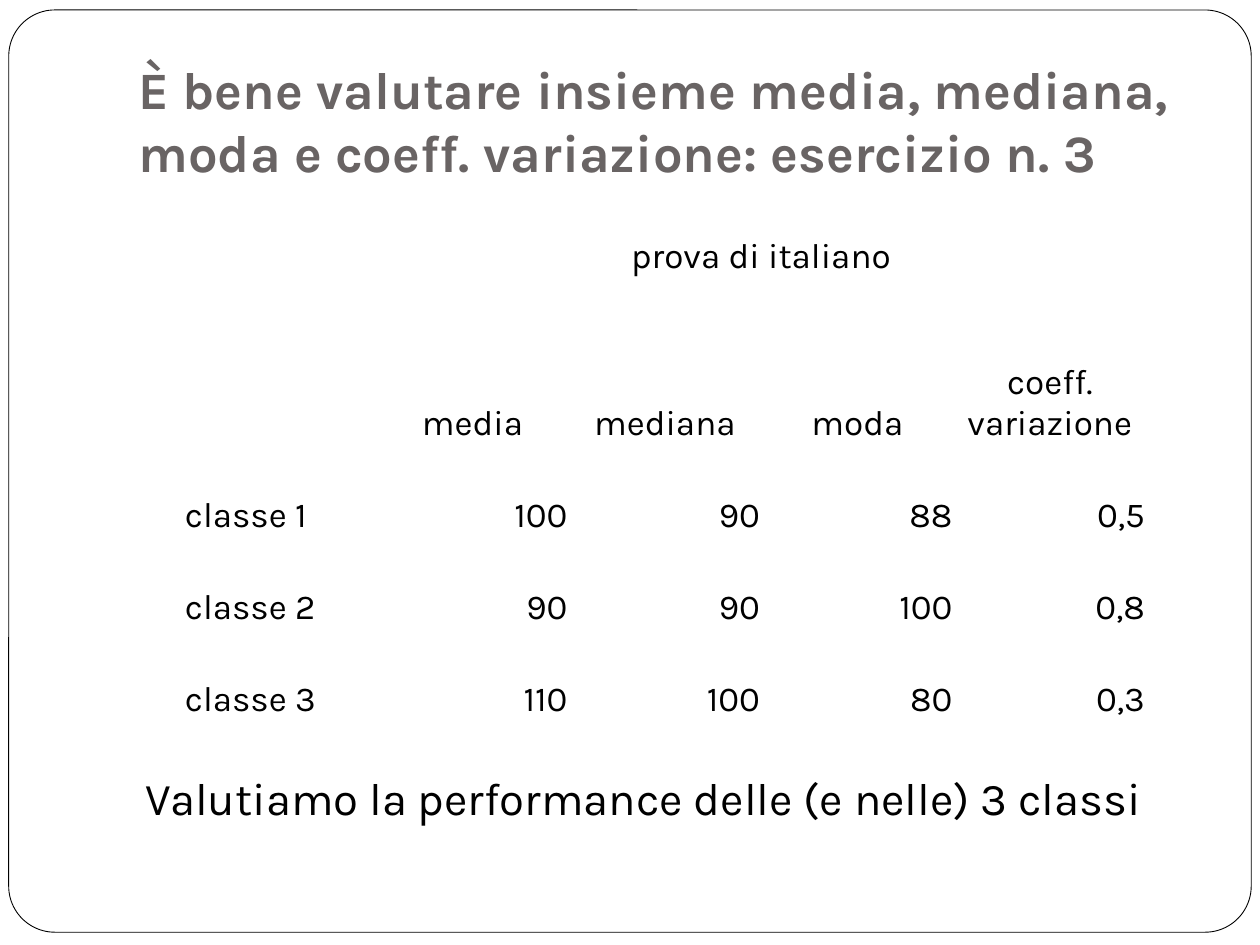
from pptx import Presentation
from pptx.dml.color import RGBColor
from pptx.enum.shapes import MSO_SHAPE
from pptx.enum.text import MSO_ANCHOR, PP_ALIGN
from pptx.util import Pt

TITLE = "È bene valutare insieme media, mediana, moda e coeff. variazione: esercizio n. 3"
CLOSING = "Valutiamo la performance delle (e nelle) 3 classi"
TABLE_ROWS = [
    ["", "prova di italiano", "", "", ""],
    ["", "media", "mediana", "moda", "coeff. variazione"],
    ["classe 1", "100", "90", "88", "0,5"],
    ["classe 2", "90", "90", "100", "0,8"],
    ["classe 3", "110", "100", "80", "0,3"],
]
HEADER_ROWS = 2
ROW_HEIGHTS = [52.6, 95.2, 52.6, 52.6, 52.6]
COLUMN_WIDTH = 110

COLORS = {"paper": "FFFFFF", "frame": "000000", "title": "696464", "text": "000000"}
TITLE_FONT = {"name": "Karla", "size": Pt(30), "bold": True}
CLOSING_FONT = {"name": "Karla", "size": Pt(26)}
TABLE_FONT = {"name": "Karla", "size": Pt(20), "bold": False}
TITLE_FRAME = {"word_wrap": True, "vertical_anchor": MSO_ANCHOR.BOTTOM,
               "margin_bottom": Pt(7.2)}
CLOSING_FRAME = {"word_wrap": True, "vertical_anchor": MSO_ANCHOR.TOP}
CELL_FORMAT = {"vertical_anchor": MSO_ANCHOR.BOTTOM, "margin_left": Pt(0.7),
               "margin_right": Pt(0.7), "margin_top": Pt(0.7), "margin_bottom": Pt(0)}


def apply_format(target, values):
    for name, value in values.items():
        setattr(target, name, value)


def write_text(para, text, font, color):
    span = para.add_run()
    span.text = text
    apply_format(span.font, font)
    span.font.color.rgb = RGBColor.from_string(COLORS[color])


def add_text(page, place, text, frame_format, font, color):
    box = page.shapes.add_textbox(*map(Pt, place))
    apply_format(box.text_frame, frame_format)
    para = box.text_frame.paragraphs[0]
    write_text(para, text, font, color)
    return para


def add_frame(page):
    frame = page.shapes.add_shape(MSO_SHAPE.ROUNDED_RECTANGLE,
                                  Pt(5), Pt(5.7), Pt(710), Pt(527))
    frame.adjustments[0] = 0.05
    frame.shadow.inherit = False
    frame.fill.solid()
    frame.fill.fore_color.rgb = RGBColor.from_string(COLORS["paper"])
    frame.line.color.rgb = RGBColor.from_string(COLORS["frame"])
    frame.line.width = Pt(0.5)


def alignment_for(row, column):
    if row < HEADER_ROWS:
        return PP_ALIGN.CENTER
    return PP_ALIGN.RIGHT if column else PP_ALIGN.LEFT


def add_scores(page):
    columns = len(TABLE_ROWS[0])
    holder = page.shapes.add_table(len(TABLE_ROWS), columns, Pt(105), Pt(106),
                                   Pt(COLUMN_WIDTH * columns), Pt(sum(ROW_HEIGHTS)))
    table = holder.table
    apply_format(table, {"first_row": False, "horz_banding": False})
    for column in table.columns:
        column.width = Pt(COLUMN_WIDTH)
    for row, height in zip(table.rows, ROW_HEIGHTS):
        row.height = Pt(height)
    table.cell(0, 1).merge(table.cell(0, columns - 1))
    for r, texts in enumerate(TABLE_ROWS):
        for c, text in enumerate(texts):
            cell = table.cell(r, c)
            cell.fill.background()
            apply_format(cell, CELL_FORMAT)
            if text:
                para = cell.text_frame.paragraphs[0]
                para.alignment = alignment_for(r, c)
                write_text(para, text, TABLE_FONT, "text")


def main():
    deck = Presentation()
    deck.slide_width, deck.slide_height = Pt(720), Pt(540)
    page = deck.slides.add_slide(deck.slide_layouts[6])
    add_frame(page)
    add_text(page, (72, 21.6, 612, 90), TITLE, TITLE_FRAME, TITLE_FONT, "title")
    closing = add_text(page, (76.3, 436.3, 612, 90), CLOSING,
                       CLOSING_FRAME, CLOSING_FONT, "text")
    closing.space_before = Pt(5.8)
    add_scores(page)
    deck.save("out.pptx")


if __name__ == "__main__":
    main()
